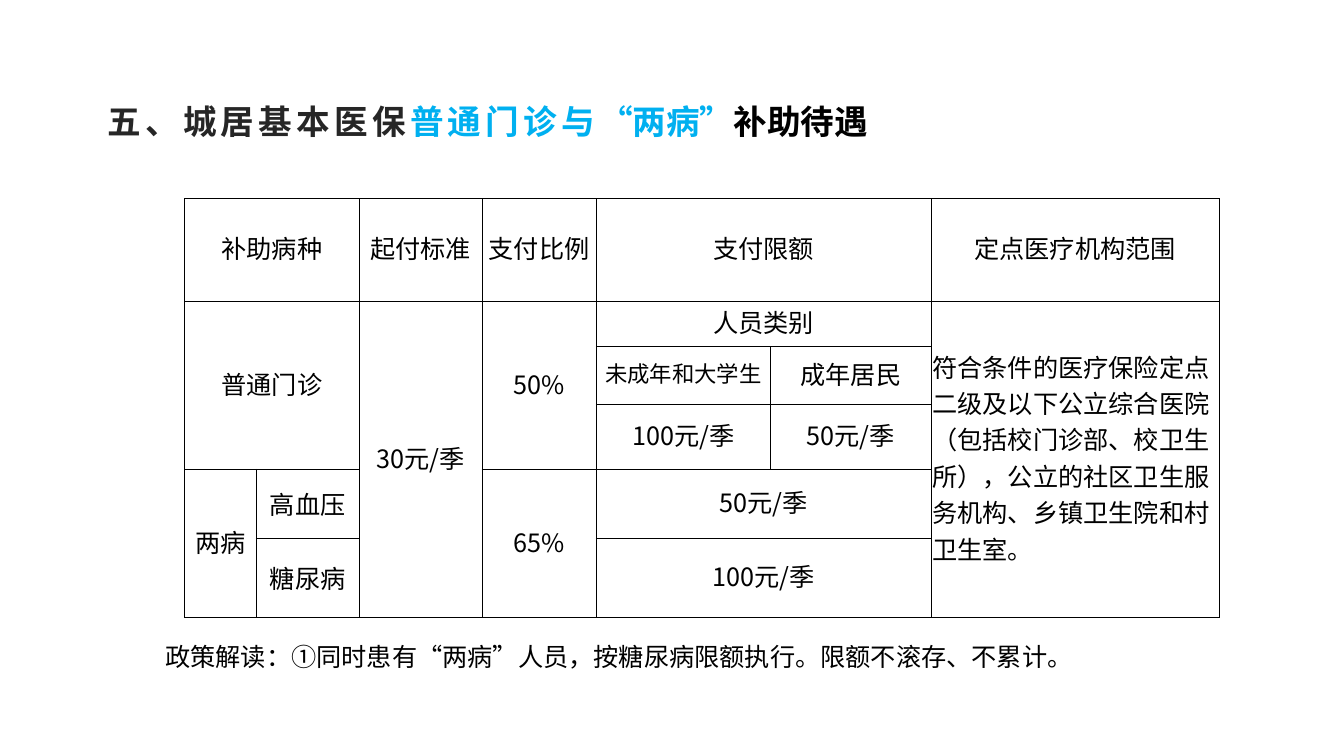
from dataclasses import dataclass

from lxml.etree import SubElement
from pptx import Presentation
from pptx.dml.color import RGBColor
from pptx.enum.text import MSO_ANCHOR, MSO_AUTO_SIZE, PP_ALIGN
from pptx.oxml.ns import qn
from pptx.util import Emu, Pt


@dataclass(frozen=True)
class Theme:
    latin: str = "Arial"
    chinese: str = "Noto Sans CJK SC"
    black: str = "000000"
    dark: str = "262626"
    accent: str = "00B0F0"
    title: int = 24
    body: int = 18
    small: int = 16
    spacing: int = 300
    border: float = 0.5


theme = Theme()

SLIDE_SIZE = (1280, 720)
TITLE_BOX = (93, 91, 988, 48)
TABLE_ORIGIN = (176, 189)
NOTE_BOX = (148, 606, 985, 38)
COLUMNS = [68, 98, 117, 109, 166, 153, 274]
ROWS = [98, 43, 55, 62, 66, 75]
CELL_INSETS = (1, 1, 1, 5)
DISEASE_INSETS = (7, 0, 7, 0)

TITLE = [
    ("五、城居基本医保", theme.dark, theme.spacing),
    ("普通门诊与", theme.accent, theme.spacing),
    ("“两病”", theme.accent, 0),
    ("补助待遇", theme.black, 0),
]
NOTE = "政策解读：①同时患有“两病”人员，按糖尿病限额执行。限额不滚存、不累计。"
SCOPE = "符合条件的医疗保险定点二级及以下公立综合医院（包括校门诊部、校卫生所），公立的社区卫生服务机构、乡镇卫生院和村卫生室。"
STUDENTS = "未成年和大学生"
DISEASES = ("高血压", "糖尿病")

CELLS = [
    (0, 0, 1, 2, "补助病种"),
    (0, 2, 1, 1, "起付标准"),
    (0, 3, 1, 1, "支付比例"),
    (0, 4, 1, 2, "支付限额"),
    (0, 6, 1, 1, "定点医疗机构范围"),
    (1, 0, 3, 2, "普通门诊"),
    (1, 2, 5, 1, "30元/季"),
    (1, 3, 3, 1, "50%"),
    (1, 4, 1, 2, "人员类别"),
    (1, 6, 5, 1, SCOPE),
    (2, 4, 1, 1, STUDENTS),
    (2, 5, 1, 1, "成年居民"),
    (3, 4, 1, 1, "100元/季"),
    (3, 5, 1, 1, "50元/季"),
    (4, 0, 2, 1, "两病"),
    (4, 1, 1, 1, DISEASES[0]),
    (4, 3, 2, 1, "65%"),
    (4, 4, 1, 2, "50元/季"),
    (5, 1, 1, 1, DISEASES[1]),
    (5, 4, 1, 2, "100元/季"),
]


def px(value):
    return Emu(value * 9525)


def style_run(run, size, color, latin, bold=False, spacing=0):
    run.font.size = Pt(size)
    run.font.bold = bold
    run.font.name = latin
    run.font.color.rgb = RGBColor.from_string(color)
    properties = run._r.get_or_add_rPr()
    properties.set("lang", "zh-CN")
    properties.set("spc", str(spacing))
    SubElement(properties, qn("a:ea")).set("typeface", theme.chinese)


def add_text(slide, box, size, pieces, bold=False):
    text_frame = slide.shapes.add_textbox(*map(px, box)).text_frame
    text_frame.word_wrap = True
    text_frame.auto_size = MSO_AUTO_SIZE.SHAPE_TO_FIT_TEXT
    for text, color, spacing in pieces:
        run = text_frame.paragraphs[0].add_run()
        run.text = text
        style_run(run, size, color, theme.latin, bold, spacing)


def outline_cell(cell):
    properties = cell._tc.get_or_add_tcPr()
    for side in ("L", "R", "T", "B"):
        line = SubElement(properties, qn(f"a:ln{side}"))
        line.set("w", str(Pt(theme.border)))
        fill = SubElement(line, qn("a:solidFill"))
        SubElement(fill, qn("a:srgbClr")).set("val", theme.black)
    cell.fill.background()


def fill_cell(cell, text):
    insets = DISEASE_INSETS if text in DISEASES else CELL_INSETS
    cell.margin_left, cell.margin_top, cell.margin_right, cell.margin_bottom = map(px, insets)
    cell.vertical_anchor = MSO_ANCHOR.MIDDLE
    cell.text_frame.text = text
    paragraph = cell.text_frame.paragraphs[0]
    paragraph.alignment = PP_ALIGN.LEFT if text == SCOPE else PP_ALIGN.CENTER
    size = theme.small if text == STUDENTS else theme.body
    style_run(paragraph.runs[0], size, theme.black, theme.chinese)


def add_benefit_table(slide):
    box = (*TABLE_ORIGIN, sum(COLUMNS), sum(ROWS))
    table = slide.shapes.add_table(len(ROWS), len(COLUMNS), *map(px, box)).table
    table.first_row = False
    table.horz_banding = False
    for column, width in zip(table.columns, COLUMNS):
        column.width = px(width)
    for row, height in zip(table.rows, ROWS):
        row.height = px(height)
    for cell in table.iter_cells():
        outline_cell(cell)
    for row, column, height, width, text in CELLS:
        cell = table.cell(row, column)
        if height * width > 1:
            cell.merge(table.cell(row + height - 1, column + width - 1))
        fill_cell(cell, text)


def main():
    presentation = Presentation()
    presentation.slide_width, presentation.slide_height = map(px, SLIDE_SIZE)
    slide = presentation.slides.add_slide(presentation.slide_layouts[6])
    add_text(slide, TITLE_BOX, theme.title, TITLE, bold=True)
    add_benefit_table(slide)
    add_text(slide, NOTE_BOX, theme.body, [(NOTE, theme.black, 0)])
    presentation.save("out.pptx")


if __name__ == "__main__":
    main()
